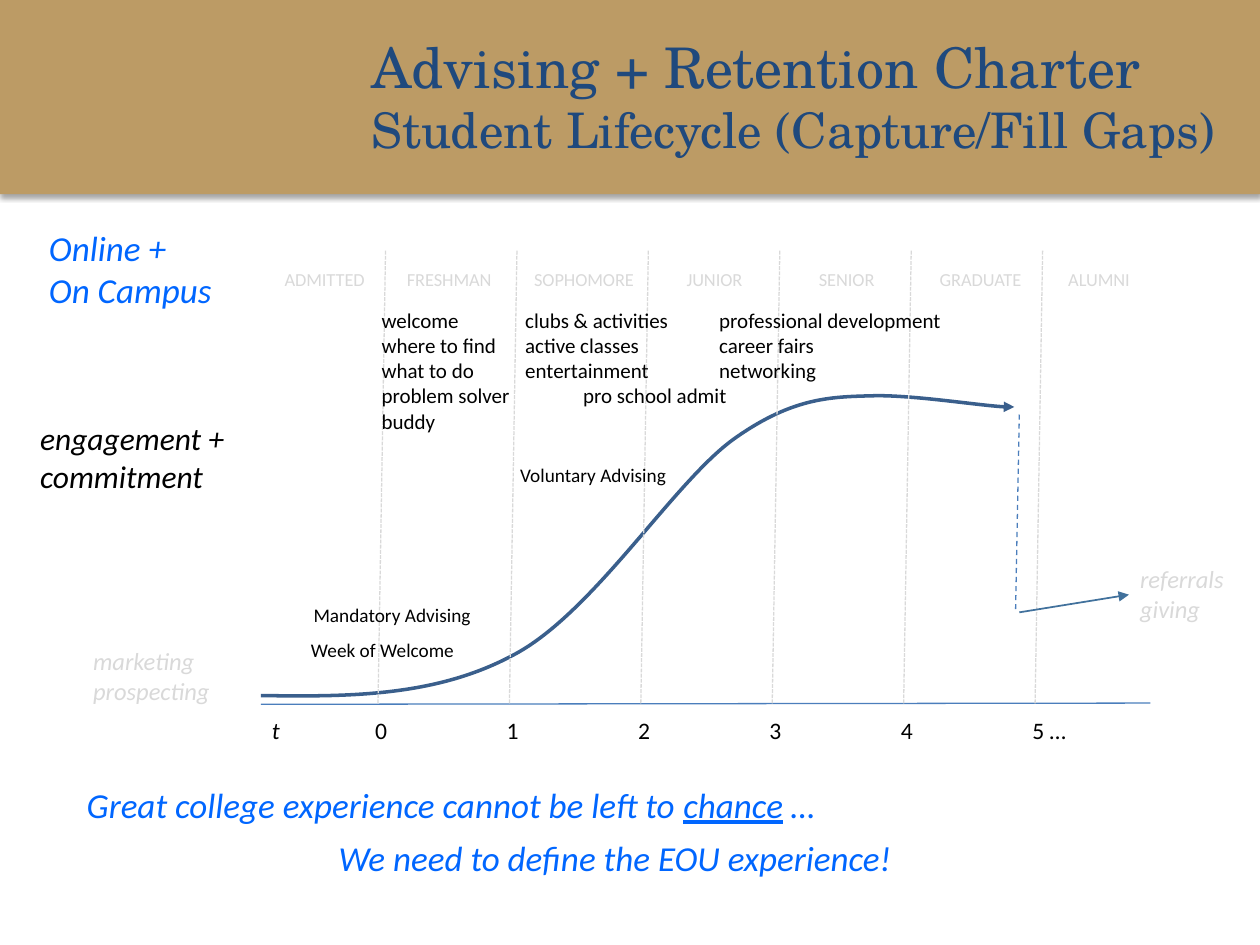
from lxml.etree import SubElement
from pptx import Presentation
from pptx.dml.color import RGBColor
from pptx.enum.dml import MSO_LINE as DASH
from pptx.enum.shapes import MSO_CONNECTOR as CONN, MSO_SHAPE as SHAPE
from pptx.enum.text import MSO_ANCHOR as ANCHOR, MSO_AUTO_SIZE as FIT
from pptx.oxml.ns import qn
from pptx.util import Inches, Pt

COLS, ROWS = 100, 75
INK, PALE, BLUE, NAVY = "000000", "D9D9D9", "0066FF", "1F497D"
GOLD, CURVE, AXIS, ARROW = "BC9B65", "3A5F8C", "4B7EBC", "41719C"


def rgb(value):
    return RGBColor.from_string(value)


class LifecycleSlide:
    """Draws styled elements on one slide, measured in columns and rows."""

    def __init__(self, prs, font="Calibri"):
        self.s = prs.slides.add_slide(prs.slide_layouts[6])
        self.col, self.row = prs.slide_width / COLS, prs.slide_height / ROWS
        self.font = font

    def place(self, x, y):
        return round(x * self.col), round(y * self.row)

    def stroke(self, sp, color, width, dash=None, arrow=False):
        sp.line.color.rgb = rgb(color)
        sp.line.width = Pt(width)
        if dash:
            sp.line.dash_style = dash
        if arrow:
            SubElement(sp.line._get_or_add_ln(), qn("a:tailEnd"), type="triangle")

    def band(self, x, y, w, h, color):
        sp = self.s.shapes.add_shape(SHAPE.RECTANGLE, *self.place(x, y), *self.place(w, h))
        sp.fill.solid()
        sp.fill.fore_color.rgb = rgb(color)
        sp.line.fill.background()
        sp.shadow.inherit = False
        effects = sp._element.spPr.find(qn("a:effectLst"))
        shadow = SubElement(effects, qn("a:outerShdw"), blurRad=str(Pt(3.1)),
                            dist=str(Pt(1.8)), dir="5400000", rotWithShape="0")
        shade = SubElement(shadow, qn("a:srgbClr"), val=INK)
        SubElement(shade, qn("a:alpha"), val="35000")

    def line(self, start, end, color, width=0.75, **style):
        sp = self.s.shapes.add_connector(CONN.STRAIGHT, *self.place(*start), *self.place(*end))
        self.stroke(sp, color, width, **style)
        SubElement(sp._element.spPr, qn("a:effectLst"))

    def curve(self, points, color, width):
        start, *rest = [self.place(*point) for point in points]
        builder = self.s.shapes.build_freeform(*start)
        builder.add_line_segments(rest, close=False)
        sp = builder.convert_to_shape()
        sp.fill.background()
        sp.shadow.inherit = False
        self.stroke(sp, color, width, arrow=True)
        outline = next(sp._element.iter(qn("a:path")))
        for i, segment in enumerate(outline.findall(qn("a:lnTo"))):
            if i % 3 == 0:
                bezier = SubElement(outline, qn("a:cubicBezTo"))
            bezier.append(segment[0])
            outline.remove(segment)

    def text(self, x, y, w, h, lines, size, color=INK, wrap=False,
             anchor=ANCHOR.TOP, indents=(), gap=0, **extra):
        sp = self.s.shapes.add_textbox(*self.place(x, y), *self.place(w, h))
        tf = sp.text_frame
        frame = {"word_wrap": wrap, "auto_size": FIT.SHAPE_TO_FIT_TEXT, "vertical_anchor": anchor}
        for name, value in frame.items():
            setattr(tf, name, value)
        for i, runs in enumerate(lines):
            p = tf.add_paragraph() if i else tf.paragraphs[0]
            if i and gap:
                p.space_before = Pt(gap)
            if i < len(indents) and indents[i]:
                p._p.get_or_add_pPr().set("marL", str(round(indents[i] * self.col)))
            for part, own in [(runs, {})] if isinstance(runs, str) else runs:
                r = p.add_run()
                r.text = part
                r.font.color.rgb = rgb(color)
                style = {"name": self.font, "size": Pt(size), **extra, **own}
                for name, value in style.items():
                    setattr(r.font, name, value)


def main():
    prs = Presentation()
    prs.slide_width, prs.slide_height = Inches(10), Inches(7.5)
    slide = LifecycleSlide(prs)

    slide.band(0, -0.1, 100, 15.5, GOLD)
    slide.curve([(20.7, 55.2), (27.7, 55.3), (34.7, 55.3), (40.9, 51.9),
                 (47.2, 48.5), (53.5, 38.2), (58.3, 34.8),
                 (63.1, 31.4), (66.2, 31.5), (69.6, 31.4),
                 (72.9, 31.4), (79.1, 32.4), (80.5, 32.3)], CURVE, 2)
    slide.line((20.7, 55.9), (91.3, 55.8), AXIS)

    year = 10.43
    for i, label in enumerate(["0", "1", "2", "3", "4", "5 …"]):
        slide.line((30.6 + i * year, 19.9), (30 + i * year, 55.9), PALE, dash=DASH.SQUARE_DOT)
        slide.text(28.8 + i * year, 56.3, 3 if len(label) == 1 else 4.7, 3.3, [label], 13.5)
    slide.text(20.6, 56.3, 2.7, 3.3, ["t"], 13.5, italic=True)

    phases = [("ADMITTED", 21.6, 8.5), ("FRESHMAN", 31.3, 8.9), ("SOPHOMORE", 41.4, 10.1),
              ("JUNIOR", 53.5, 6.5), ("SENIOR", 64, 6.5), ("GRADUATE", 73.6, 8.8),
              ("ALUMNI", 83.8, 7)]
    for phase, x, w in phases:
        slide.text(x, 20.8, w, 2.8, [phase], 10.5, PALE)

    slide.line((80.9, 48.6), (89.6, 47.2), ARROW, 1, arrow=True)
    slide.line((80.9, 32.9), (80.6, 48.6), AXIS, dash=DASH.DASH)

    slide.text(2.2, 32.8, 17.7, 7.1, ["engagement +", "commitment"], 18, wrap=True, italic=True)
    slide.text(89.5, 44.3, 8.7, 5.7, ["referrals", "giving"], 14, PALE, italic=True)
    slide.text(6.4, 50.8, 11.4, 5.7, ["marketing", "prospecting"], 14, PALE, italic=True)

    for label, x, y, w in [("Week of Welcome", 23.7, 50.2, 13.6),
                           ("Mandatory Advising", 23.9, 47.4, 14.6),
                           ("Voluntary Advising", 40.3, 36.3, 13.7)]:
        slide.text(x, y, w, 2.9, [label], 11)

    slide.text(40.7, 23.9, 21.2, 9.1, ["clubs & activities", "active classes", "entertainment",
                                       "pro school admit"], 12, wrap=True, indents=(0, 0, 0, 4.6))
    slide.text(56.1, 23.9, 21.2, 7.1, ["professional development", "career fairs", "networking"],
               12, wrap=True)
    slide.text(29.3, 23.9, 12.9, 11.1, ["welcome", "where to find", "what to do",
                                        "problem solver", "buddy"], 12, wrap=True)

    promise = [("Great college experience cannot be left to ", {}),
               ("chance", {"underline": True}), (" …", {})]
    slide.text(5.9, 61.7, 66.4, 8.6, [promise, "We need to define the EOU experience!"], 20, BLUE,
               wrap=True, indents=(0, 20), gap=6, italic=True)
    slide.text(2.9, 17.5, 15, 7.7, ["Online +", "On Campus"], 20, BLUE, italic=True)
    slide.text(28.5, 2, 72.5, 11.1,
               ["Advising + Retention Charter",
                [("Student Lifecycle (Capture/Fill Gaps)", {"size": Pt(28)})]],
               32, NAVY, wrap=True, anchor=ANCHOR.MIDDLE, name="TeX Gyre Schola")

    prs.save("out.pptx")


if __name__ == "__main__":
    main()
